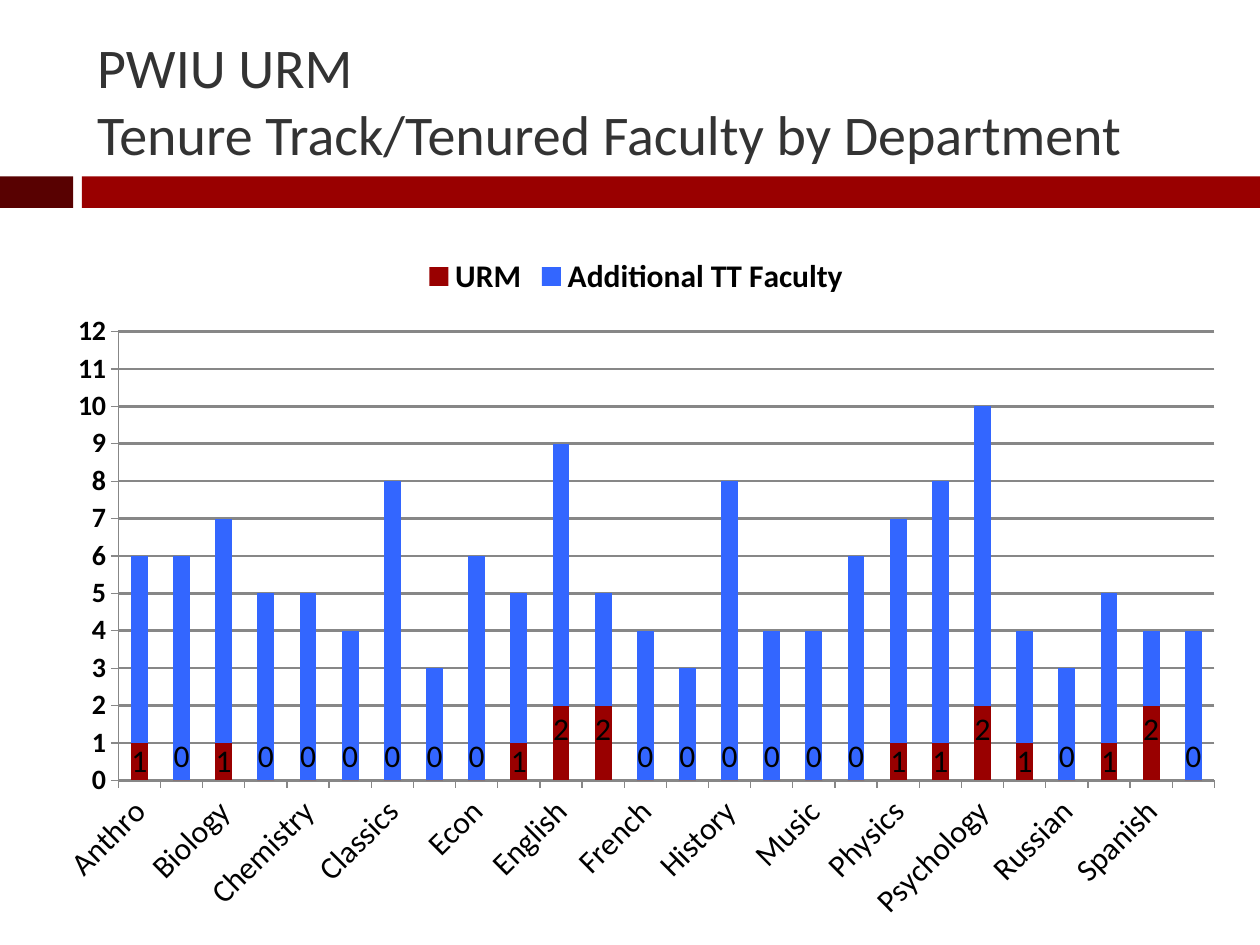
import pptx
import pptx.chart.data
import pptx.dml.color
import pptx.enum.chart
import pptx.enum.shapes
import pptx.enum.text
import pptx.util
from lxml import etree

Inches = pptx.util.Inches
Pt = pptx.util.Pt
enum = pptx.enum.chart

HUES = {"dark": "580101", "red": "990000", "blue": "3366FF",
        "title": "333333", "text": "000000", "grid": "878787"}
DEPTS = ["Anthro", "Art", "Biology", "Business", "Chemistry", "Chinese",
         "Classics", "Dance", "Econ", "Education", "English",
         "Ethnic Studies", "French", "German", "History", "Math", "Music",
         "Philosophy", "Physics", "Poli Sci", "Psychology", "Religion",
         "Russian", "Sociology", "Spanish", "Theatre"]
URM = [1, 0, 1, 0, 0, 0, 0, 0, 0, 1, 2, 2, 0,
       0, 0, 0, 0, 0, 1, 1, 2, 1, 0, 1, 2, 0]
OTHER = [5, 6, 6, 5, 5, 4, 8, 3, 6, 4, 7, 3, 4,
         3, 8, 4, 4, 6, 6, 7, 8, 3, 3, 4, 2, 4]
PLOT = {"x": 0.07, "y": 0.13, "w": 0.91, "h": 0.65}


def hue(name):
    return pptx.dml.color.RGBColor.from_string(HUES[name])


def apply(item, values):
    for name, value in values.items():
        setattr(item, name, value)


def style(font, size, color, bold=False):
    apply(font, {"name": "Calibri", "size": Pt(size), "bold": bold})
    font.color.rgb = hue(color)


def paint(fill, color):
    fill.solid()
    fill.fore_color.rgb = hue(color)


def add_bar(slide, left, width, color):
    bar = slide.shapes.add_shape(
        pptx.enum.shapes.MSO_SHAPE.RECTANGLE,
        Inches(left), Inches(1.4), Inches(width), Inches(0.25))
    bar.shadow.inherit = False
    paint(bar.fill, color)
    bar.line.fill.background()


def set_title(slide, text):
    title = slide.shapes.title
    apply(title, {"left": Inches(0.67), "top": Inches(0.25),
                  "width": Inches(8.92), "height": Inches(1.08)})
    frame = title.text_frame
    apply(frame, {"text": text, "word_wrap": True,
                  "auto_size": pptx.enum.text.MSO_AUTO_SIZE.NONE,
                  "vertical_anchor": pptx.enum.text.MSO_ANCHOR.MIDDLE})
    para = frame.paragraphs[0]
    apply(para, {"alignment": pptx.enum.text.PP_ALIGN.LEFT,
                 "line_spacing": 1.0})
    for run in para.runs:
        style(run.font, 32, "title")


def set_plot(chart):
    area = chart.plots[0]._element.getparent()
    tag = pptx.oxml.ns.qn
    for old in area.findall(tag("c:layout")):
        area.remove(old)
    layout = etree.Element(tag("c:layout"))
    manual = etree.SubElement(layout, tag("c:manualLayout"))
    parts = {"layoutTarget": "inner", "xMode": "edge", "yMode": "edge", **PLOT}
    for name, value in parts.items():
        etree.SubElement(manual, tag("c:" + name)).set("val", str(value))
    area.insert(0, layout)


def set_axes(chart):
    cat, val = chart.category_axis, chart.value_axis
    apply(val, {"minimum_scale": 0, "maximum_scale": 12, "major_unit": 1,
                "has_major_gridlines": True})
    for axis, size, bold in ((cat, 18, False), (val, 16, True)):
        axis.major_tick_mark = enum.XL_TICK_MARK.OUTSIDE
        style(axis.tick_labels.font, size, "text", bold)
        axis.format.line.color.rgb = hue("grid")
        axis.format.line.width = Pt(0.75)
    grid = val.major_gridlines.format.line
    grid.color.rgb = hue("grid")
    grid.width = Pt(1.5)
    root = cat._element
    root.txPr.find(pptx.oxml.ns.qn("a:bodyPr")).set("rot", "-2700000")
    skip = etree.Element(pptx.oxml.ns.qn("c:tickLblSkip"), val="2")
    root.find(pptx.oxml.ns.qn("c:noMultiLvlLbl")).addprevious(skip)


def set_labels(series):
    labels = series.data_labels
    apply(labels, {"show_value": True,
                   "position": enum.XL_LABEL_POSITION.CENTER})
    style(labels.font, 18, "text")
    spots = {0: enum.XL_LABEL_POSITION.INSIDE_BASE,
             2: enum.XL_LABEL_POSITION.INSIDE_END}
    for index, value in enumerate(URM):
        if value in spots:
            label = series.points[index].data_label
            style(label.font, 18, "text")
            label.position = spots[value]


def add_chart(slide):
    data = pptx.chart.data.CategoryChartData()
    data.categories = DEPTS
    data.add_series("URM", URM)
    data.add_series("Additional TT Faculty", OTHER)
    chart = slide.shapes.add_chart(
        enum.XL_CHART_TYPE.COLUMN_STACKED, Inches(0.27), Inches(1.92),
        Inches(9.56), Inches(5.48), data).chart
    apply(chart, {"has_title": False, "has_legend": True})
    style(chart.font, 18, "text")
    apply(chart.legend, {"position": enum.XL_LEGEND_POSITION.TOP,
                         "include_in_layout": False})
    style(chart.legend.font, 18, "text", True)
    plot = chart.plots[0]
    apply(plot, {"gap_width": 150, "overlap": 100,
                 "vary_by_categories": False})
    for series, color in zip(plot.series, ("red", "blue")):
        paint(series.format.fill, color)
    set_labels(plot.series[0])
    set_axes(chart)
    set_plot(chart)


def main():
    deck = pptx.Presentation()
    apply(deck, {"slide_width": Inches(10), "slide_height": Inches(7.5)})
    slide = deck.slides.add_slide(deck.slide_layouts[5])
    add_bar(slide, 0, 0.58, "dark")
    add_bar(slide, 0.65, 9.35, "red")
    set_title(slide, "PWIU URM\vTenure Track/Tenured Faculty by Department")
    add_chart(slide)
    deck.save("out.pptx")


if __name__ == "__main__":
    main()
